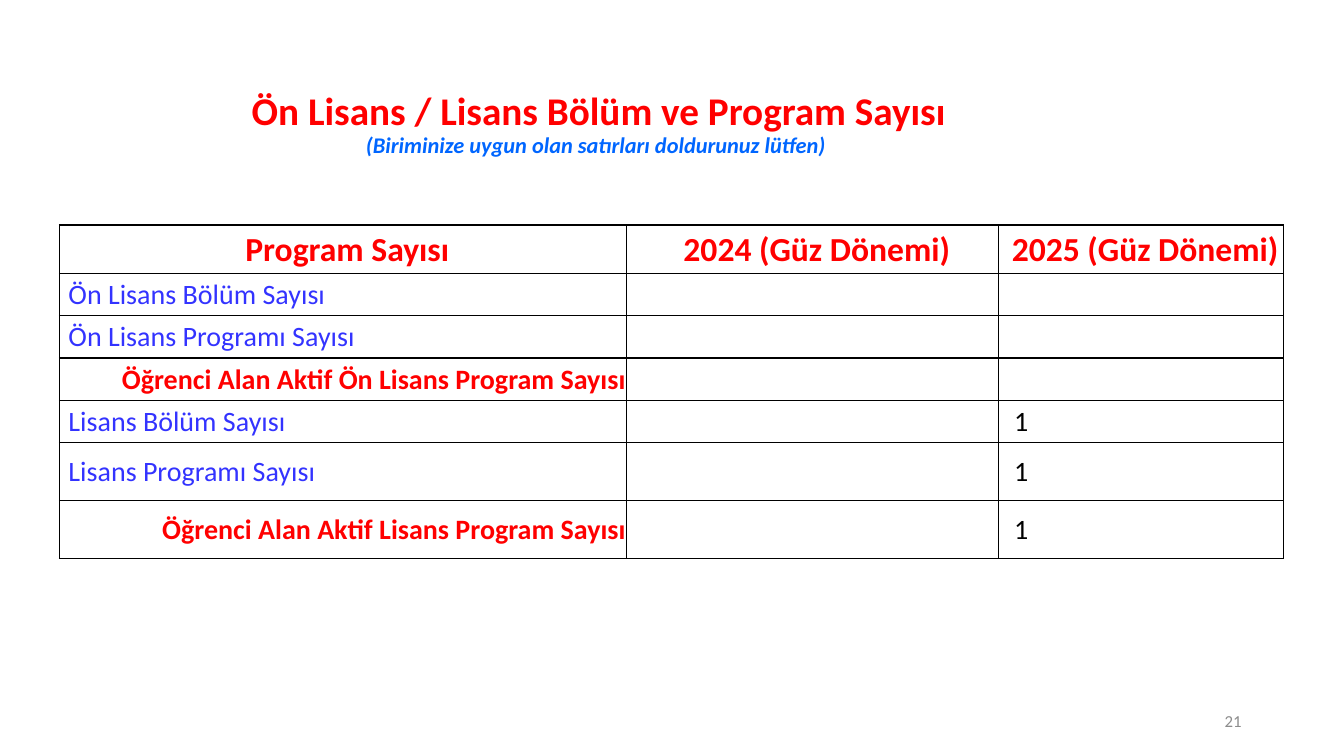
from lxml.etree import SubElement
from pptx import Presentation
from pptx.dml.color import RGBColor
from pptx.enum.text import MSO_ANCHOR, PP_ALIGN
from pptx.oxml.ns import qn
from pptx.util import Pt

RED = RGBColor(0xFF, 0x00, 0x00)
BLUE = RGBColor(0x33, 0x33, 0xFF)
SKY = RGBColor(0x00, 0x66, 0xFF)
GRAY = RGBColor(0x8C, 0x8C, 0x8C)
BLACK = RGBColor(0x00, 0x00, 0x00)
WHITE = RGBColor(0xFF, 0xFF, 0xFF)

HEADING = {"size": Pt(24), "bold": True, "color": RED}
LABEL = {"size": Pt(20), "bold": False, "color": BLUE}
ACTIVE = {"size": Pt(20), "bold": True, "color": RED}
COUNT = {"size": Pt(20), "bold": False, "color": BLACK}

COLUMN_WIDTHS = (405.4, 265.6, 203.4)
ROW_HEIGHTS = (34.6, 30.2, 30.2, 30.2, 30.2, 41.2, 42)
PROGRAM_COUNTS = (
    ("Program Sayısı", "2024 (Güz Dönemi)", "2025 (Güz Dönemi)"),
    ("Ön Lisans Bölüm Sayısı", "", ""),
    ("Ön Lisans Programı Sayısı", "", ""),
    ("Öğrenci Alan Aktif Ön Lisans Program Sayısı", "", ""),
    ("Lisans Bölüm Sayısı", "", " 1"),
    ("Lisans Programı Sayısı", "", " 1"),
    ("Öğrenci Alan Aktif Lisans Program Sayısı", "", " 1"),
)


def add_run(paragraph, words, style):
    run = paragraph.add_run()
    run.text = words
    run.font.name = "Calibri"
    for attribute, value in style.items():
        if attribute == "color":
            run.font.color.rgb = value
        else:
            setattr(run.font, attribute, value)


def add_text_frame(slide, left, top, width, height, align):
    frame = slide.shapes.add_textbox(Pt(left), Pt(top), Pt(width), Pt(height)).text_frame
    frame.word_wrap = True
    frame.vertical_anchor = MSO_ANCHOR.MIDDLE
    paragraph = frame.paragraphs[0]
    paragraph.alignment = align
    return paragraph


def add_title(slide, left, top, width, height):
    title = add_text_frame(slide, left, top, width, height, PP_ALIGN.CENTER)
    title.line_spacing = 0.9
    add_run(title, "Ön Lisans / Lisans Bölüm ve Program Sayısı",
            {"size": Pt(28), "bold": True, "color": RED})
    title.add_line_break()
    add_run(title, "(Biriminize uygun olan satırları doldurunuz lütfen) ",
            {"size": Pt(16), "bold": True, "italic": True, "color": SKY})


def add_page_number(slide, left, top, width, height):
    number = add_text_frame(slide, left, top, width, height, PP_ALIGN.RIGHT)
    add_run(number, "21", {"size": Pt(12), "color": GRAY})


def add_borders(cell):
    properties = cell._tc.get_or_add_tcPr()
    for position, side in enumerate(("lnL", "lnR", "lnT", "lnB")):
        line = SubElement(properties, qn(f"a:{side}"), w=str(Pt(1)))
        properties.insert(position, line)
        fill = SubElement(line, qn("a:solidFill"))
        SubElement(fill, qn("a:srgbClr"), val=str(BLACK))


def cell_format(row, column, words):
    if row == 0:
        return HEADING, PP_ALIGN.CENTER
    if column > 0:
        return COUNT, PP_ALIGN.LEFT
    if "Aktif" in words:
        return ACTIVE, PP_ALIGN.RIGHT
    return LABEL, PP_ALIGN.LEFT


def fill_cell(cell, words, style, align):
    cell.fill.solid()
    cell.fill.fore_color.rgb = WHITE
    add_borders(cell)
    margins = {"margin_left": 0.7, "margin_right": 0.7, "margin_top": 0.7, "margin_bottom": 0}
    for attribute, value in margins.items():
        setattr(cell, attribute, Pt(value))
    cell.vertical_anchor = MSO_ANCHOR.MIDDLE
    paragraph = cell.text_frame.paragraphs[0]
    paragraph.alignment = align
    paragraph._p.get_or_add_pPr().set("marL", str(Pt(5.8)))
    if words:
        add_run(paragraph, words, style)


def add_program_table(slide, left, top, width, height):
    table = slide.shapes.add_table(len(ROW_HEIGHTS), len(COLUMN_WIDTHS),
                                   Pt(left), Pt(top), Pt(width), Pt(height)).table
    table.first_row = False
    table.horz_banding = False
    for column, share in zip(table.columns, COLUMN_WIDTHS):
        column.width = Pt(width * share / sum(COLUMN_WIDTHS))
    for row, share in zip(table.rows, ROW_HEIGHTS):
        row.height = Pt(height * share / sum(ROW_HEIGHTS))
    for r, entries in enumerate(PROGRAM_COUNTS):
        for c, words in enumerate(entries):
            fill_cell(table.cell(r, c), words, *cell_format(r, c, words))


def main():
    deck = Presentation()
    deck.slide_width, deck.slide_height = Pt(960), Pt(540)
    slide = deck.slides.add_slide(deck.slide_layouts[6])
    add_title(slide, 10, 60.5, 835, 57.6)
    add_page_number(slide, 678, 500.5, 216, 28.8)
    add_program_table(slide, 42.4, 160.7, 874.4, 238.6)
    deck.save("out.pptx")


if __name__ == "__main__":
    main()
